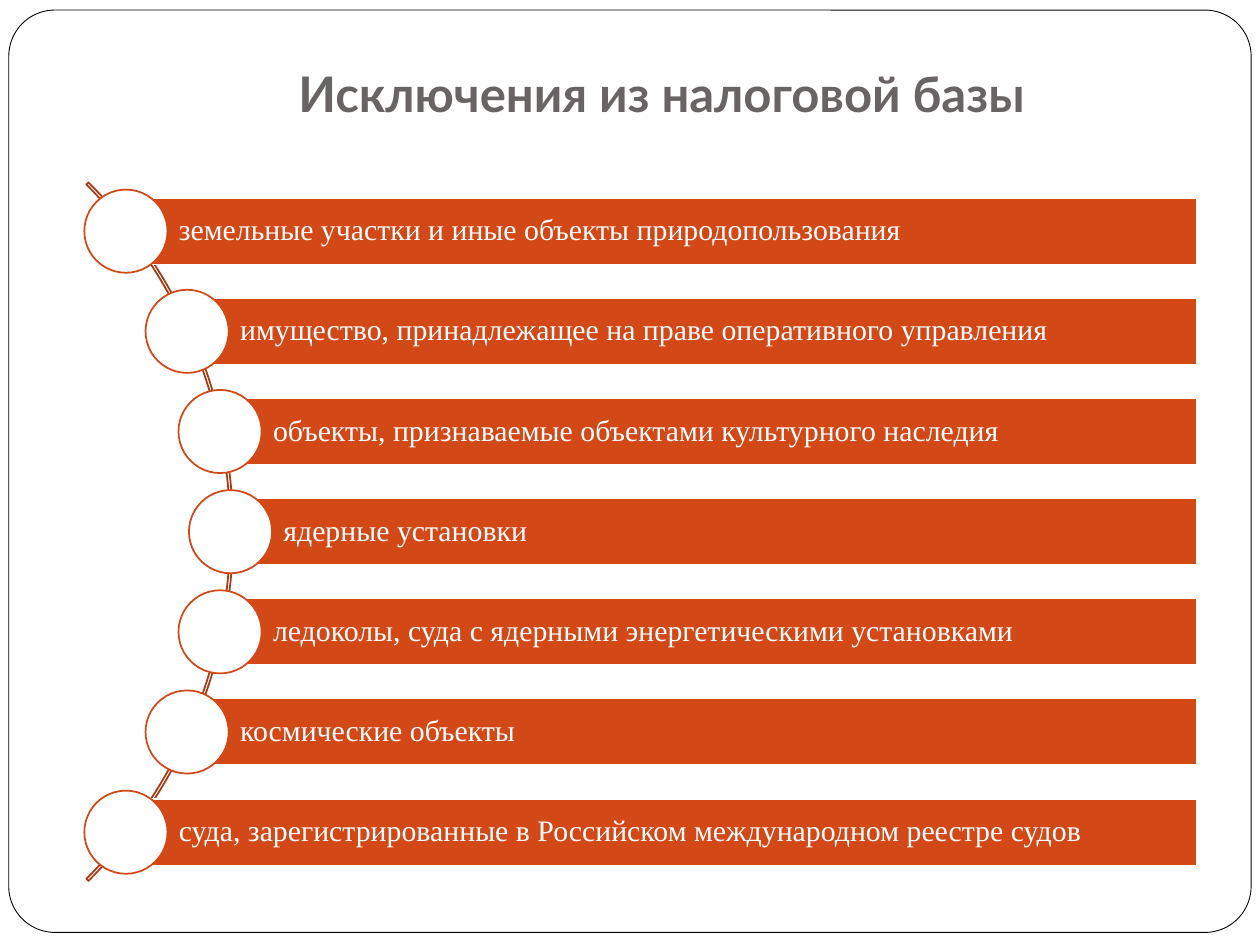
import math
from dataclasses import dataclass

from pptx import Presentation
from pptx.dml.color import RGBColor
from pptx.enum import shapes, text
from pptx.util import Inches, Pt

WIDTH, HEIGHT = 10, 7.5
ORANGE, RUST, WHITE, BLACK, GREY = "D34817", "A93A12", "FFFFFF", "000000", "696464"

EXCLUSIONS = (
    "земельные участки и иные объекты природопользования",
    "имущество, принадлежащее на праве оперативного управления",
    "объекты, признаваемые объектами культурного наследия",
    "ядерные установки",
    "ледоколы, суда с ядерными энергетическими установками",
    "космические объекты",
    "суда, зарегистрированные в Российском международном реестре судов",
)

MIDDLE_Y = 4.22
ROW_PITCH = 0.795
BAR_HEIGHT = 0.53
BAR_RIGHT = 0.95 * WIDTH
CIRCLE = 0.66
CURVE_RADIUS = 3.84
CURVE_APEX = 1.83


@dataclass(frozen=True)
class Box:
    left: float
    top: float
    width: float
    height: float

    def emu(self) -> tuple:
        return tuple(Inches(n) for n in (self.left, self.top, self.width, self.height))


@dataclass(frozen=True)
class Row:
    wording: str
    x: float
    y: float


def colour(value: str) -> RGBColor:
    return RGBColor.from_string(value)


def draw(slide, kind, box: Box, fill: str | None, line: str, weight: float = 1):
    shape = slide.shapes.add_shape(kind, *box.emu())
    shape.shadow.inherit = False
    if fill:
        shape.fill.solid()
        shape.fill.fore_color.rgb = colour(fill)
    else:
        shape.fill.background()
    shape.line.color.rgb = colour(line)
    shape.line.width = Pt(weight)
    return shape


def write(shape, wording: str, frame_format: dict, paragraph_format: dict,
          font_format: dict, ink: str) -> None:
    frame = shape.text_frame
    frame.text = wording
    paragraph = frame.paragraphs[0]
    font = paragraph.runs[0].font
    for target, values in ((frame, frame_format), (paragraph, paragraph_format),
                           (font, font_format)):
        for name, value in values.items():
            setattr(target, name, value)
    font.color.rgb = colour(ink)


def margins(left: float, top: float, right: float, bottom: float) -> dict:
    return {"margin_left": Inches(left), "margin_top": Inches(top),
            "margin_right": Inches(right), "margin_bottom": Inches(bottom),
            "word_wrap": True, "auto_size": text.MSO_AUTO_SIZE.NONE}


def place_rows() -> list[Row]:
    """Space the rows evenly and set each one on the curve."""
    rows = []
    for index, wording in enumerate(EXCLUSIONS):
        offset = (index - (len(EXCLUSIONS) - 1) / 2) * ROW_PITCH
        sag = CURVE_RADIUS - math.sqrt(CURVE_RADIUS ** 2 - offset ** 2)
        rows.append(Row(wording, CURVE_APEX - sag, MIDDLE_Y + offset))
    return rows


def draw_row(slide, row: Row) -> None:
    bar = draw(slide, shapes.MSO_SHAPE.RECTANGLE,
               Box(row.x, row.y - BAR_HEIGHT / 2, BAR_RIGHT - row.x, BAR_HEIGHT),
               ORANGE, WHITE)
    write(bar, row.wording,
          margins(0.42, 0.05, 0.05, 0.05) | {"vertical_anchor": text.MSO_ANCHOR.MIDDLE},
          {"alignment": text.PP_ALIGN.LEFT, "line_spacing": 0.9},
          {"size": Pt(17), "name": "Times New Roman"}, WHITE)
    draw(slide, shapes.MSO_SHAPE.OVAL,
         Box(row.x - CIRCLE / 2, row.y - CIRCLE / 2, CIRCLE, CIRCLE), WHITE, ORANGE)


def draw_title(slide) -> None:
    title = slide.shapes.title
    title.left, title.top, title.width, title.height = Box(1, 0.3, 8.5, 0.77).emu()
    write(title, "Исключения из налоговой базы",
          margins(0.1, 0.05, 0.1, 0.1) | {"vertical_anchor": text.MSO_ANCHOR.BOTTOM},
          {"alignment": text.PP_ALIGN.CENTER},
          {"size": Pt(28), "name": "Lato", "bold": True}, GREY)


def main() -> None:
    deck = Presentation()
    deck.slide_width, deck.slide_height = Inches(WIDTH), Inches(HEIGHT)
    slide = deck.slides.add_slide(deck.slide_layouts[5])
    draw_title(slide)

    border = draw(slide, shapes.MSO_SHAPE.ROUNDED_RECTANGLE,
                  Box(0.07, 0.08, 9.86, 7.32), WHITE, BLACK, 0.5)
    border.adjustments[0] = 0.05
    slide.shapes.title.element.addprevious(border.element)

    arc = draw(slide, shapes.MSO_SHAPE.BLOCK_ARC,
               Box(-5.99, 0.3, 7.84, 7.84), None, RUST)
    for index, value in enumerate((189, 27, 0.003)):
        arc.adjustments[index] = value

    for row in place_rows():
        draw_row(slide, row)
    deck.save("out.pptx")


if __name__ == "__main__":
    main()
